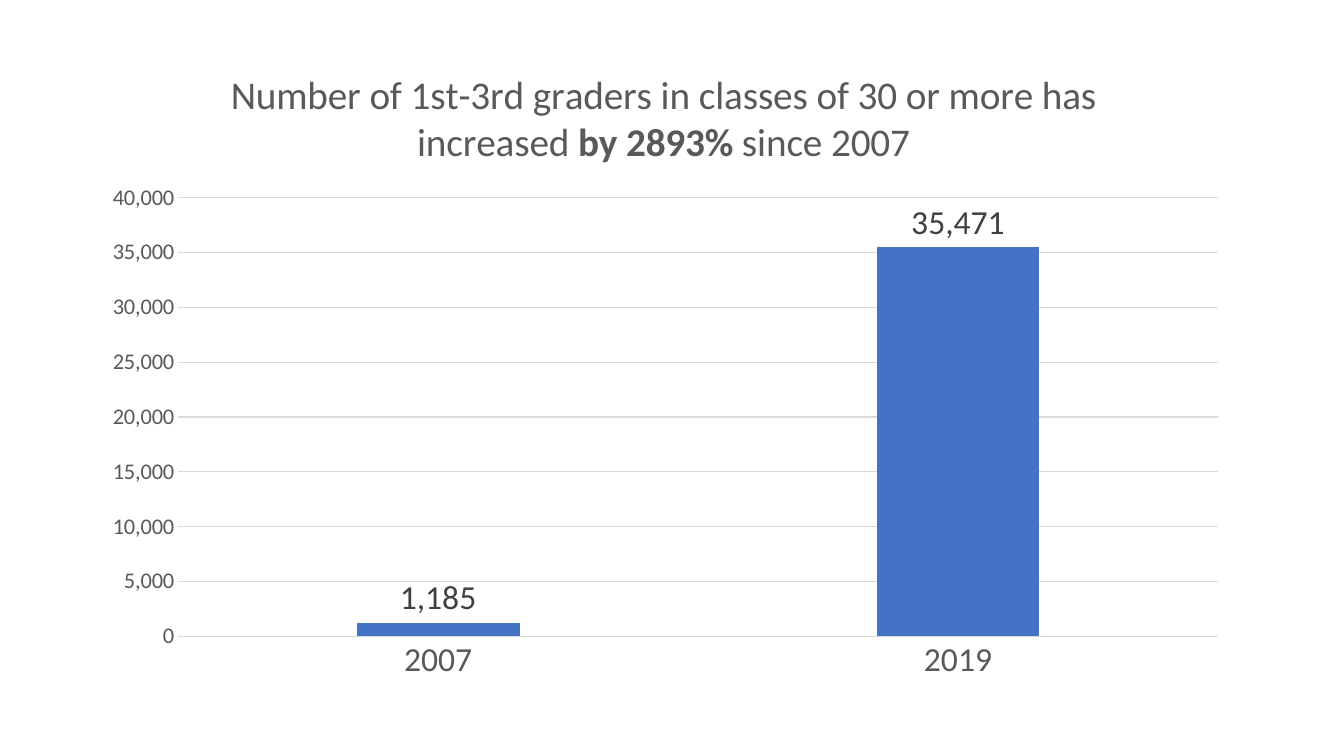
from dataclasses import dataclass

from lxml import etree
from pptx import Presentation
from pptx.chart.data import CategoryChartData
from pptx.dml.color import RGBColor
from pptx.enum.chart import XL_CHART_TYPE, XL_LABEL_POSITION, XL_TICK_MARK
from pptx.oxml.ns import qn
from pptx.util import Inches, Pt

COLUMNS = XL_CHART_TYPE.COLUMN_CLUSTERED
ABOVE_BAR = XL_LABEL_POSITION.OUTSIDE_END
NO_TICKS = XL_TICK_MARK.NONE


@dataclass(frozen=True)
class Theme:
    font: str = "Calibri"
    text: RGBColor = RGBColor(0x59, 0x59, 0x59)
    label: RGBColor = RGBColor(0x40, 0x40, 0x40)
    bar: RGBColor = RGBColor(0x44, 0x72, 0xC4)
    rule: RGBColor = RGBColor(0xD9, 0xD9, 0xD9)
    title_size: int = 28
    label_size: int = 24
    scale_size: int = 16
    rule_width: float = 0.75


THEME = Theme()
TITLE_SPANS = (
    ("Number of 1st-3rd graders in classes of 30 or more has increased ", False),
    ("by 2893%", True),
    (" since 2007", False),
)
GRADERS_BY_YEAR = {"2007": 1185, "2019": 35471}
PLOT_LAYOUT = {"x": 0.08, "y": 0.23, "w": 0.9, "h": 0.68}


def style_font(font, size, color, bold=False):
    font.name = THEME.font
    font.size = Pt(size)
    font.bold = bold
    font.color.rgb = color


def style_rule(line):
    line.color.rgb = THEME.rule
    line.width = Pt(THEME.rule_width)


def write_title(chart):
    chart.has_title = True
    chart.chart_title.include_in_layout = False
    para = chart.chart_title.text_frame.paragraphs[0]
    for text, bold in TITLE_SPANS:
        span = para.add_run()
        span.text = text
        style_font(span.font, THEME.title_size, THEME.text, bold)


def style_axes(chart):
    years, scale = chart.category_axis, chart.value_axis
    for axis, size in ((years, THEME.label_size), (scale, THEME.scale_size)):
        axis.major_tick_mark = NO_TICKS
        axis.minor_tick_mark = NO_TICKS
        style_font(axis.tick_labels.font, size, THEME.text)
    style_rule(years.format.line)
    scale.minimum_scale = 0
    scale.maximum_scale = 40000
    scale.major_unit = 5000
    scale.tick_labels.number_format = "#,##0"
    scale.tick_labels.number_format_is_linked = False
    scale.format.line.fill.background()
    style_rule(scale.major_gridlines.format.line)


def style_bars(chart):
    plot = chart.plots[0]
    plot.gap_width = 219
    plot.overlap = -27
    plot.vary_by_categories = False
    series = plot.series[0]
    series.format.fill.solid()
    series.format.fill.fore_color.rgb = THEME.bar
    labels = series.data_labels
    labels.show_value = True
    labels.position = ABOVE_BAR
    labels.number_format = "#,##0"
    labels.number_format_is_linked = False
    style_font(labels.font, THEME.label_size, THEME.label)


def place_plot(chart):
    area = chart.element.find(".//" + qn("c:plotArea"))
    for layout in area.findall(qn("c:layout")):
        area.remove(layout)
    layout = etree.Element(qn("c:layout"))
    area.insert(0, layout)
    manual = etree.SubElement(layout, qn("c:manualLayout"))
    settings = {"layoutTarget": "inner", "xMode": "edge", "yMode": "edge", **PLOT_LAYOUT}
    for name, value in settings.items():
        etree.SubElement(manual, qn(f"c:{name}")).set("val", str(value))


def add_class_size_chart(page, left, top, width, height):
    data = CategoryChartData(number_format="#,##0")
    data.categories = list(GRADERS_BY_YEAR)
    data.add_series("Series 1", list(GRADERS_BY_YEAR.values()))
    box = page.shapes.add_chart(
        COLUMNS, Inches(left), Inches(top), Inches(width), Inches(height), data
    )
    chart = box.chart
    chart.has_legend = False
    chart.font.name = THEME.font
    write_title(chart)
    style_axes(chart)
    style_bars(chart)
    place_plot(chart)


def main():
    deck = Presentation()
    deck.slide_width = Inches(13.33)
    deck.slide_height = Inches(7.5)
    page = deck.slides.add_slide(deck.slide_layouts[6])
    add_class_size_chart(page, 0.85, 0.49, 11.46, 6.4)
    deck.save("out.pptx")


if __name__ == "__main__":
    main()
